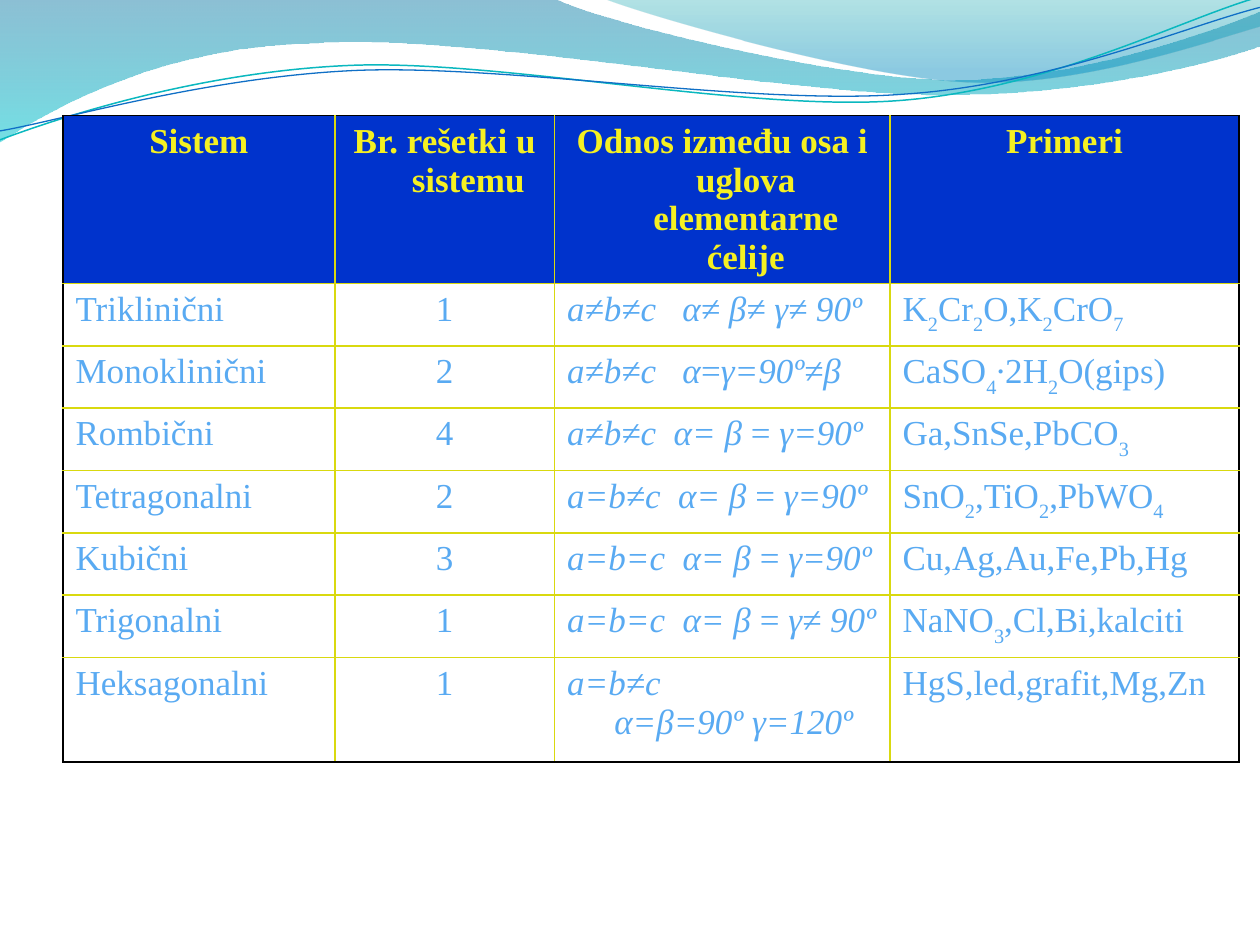
import pptx
import pptx.dml.color
import pptx.enum.text
import pptx.oxml
import pptx.oxml.ns
import pptx.util
from lxml import etree

Cm = pptx.util.Cm
Pt = pptx.util.Pt
RGBColor = pptx.dml.color.RGBColor
Align = pptx.enum.text.PP_ALIGN
qn = pptx.oxml.ns.qn

BLACK = RGBColor(0x00, 0x00, 0x00)
RULE_YELLOW = RGBColor(0xD9, 0xD9, 0x0F)
HEADER_BLUE = RGBColor(0x00, 0x33, 0xCC)
HEADER_YELLOW = RGBColor(0xF5, 0xF0, 0x22)
BODY_BLUE = RGBColor(0x59, 0xAA, 0xF2)
DEEP_BLUE = RGBColor(0x00, 0x74, 0xA1)
CYAN = RGBColor(0x00, 0xC6, 0xCF)
TEAL = RGBColor(0x00, 0xA1, 0xA9)
SKY_BLUE = RGBColor(0x00, 0x8B, 0xBF)
LINE_TEAL = RGBColor(0x0A, 0xB8, 0xBF)
LINE_BLUE = RGBColor(0x0F, 0x6F, 0xC6)

# Outlines in cm: one point is a straight step, three points are a Bézier step.
LEFT_WAVE = [
    [(0, 0)], [(11.18, -0.03)],
    [(12.09, 0.43), (16.87, 1.6), (19.25, 1.6)],
    [(21.67, 1.6), (24.33, 0.66), (25.4, 0.23)],
    [(25.43, 0.91)],
    [(24.97, 1.12), (22.1, 1.93), (18.95, 1.91)],
    [(15.8, 1.91), (9.7, 0.71), (6.53, 0.86)],
    [(3.28, 0.91), (1.17, 2.11), (-0.03, 2.87)],
]
RIGHT_WAVE = [
    [(12.17, -0.03)],
    [(12.93, 0.28), (17.32, 1.57), (19.53, 1.65)],
    [(21.74, 1.75), (24.41, 0.81), (25.4, 0.53)],
    [(25.4, 0)],
]
TEAL_CURVE = [
    [(0, 2.82)],
    [(1.22, 2.36), (4.01, 1.45), (7.04, 1.32)],
    [(10.03, 1.19), (15.06, 2.26), (18.11, 2.03)],
    [(21.16, 1.8), (23.83, 0.38), (25.35, -0.05)],
]
BLUE_CURVE = [
    [(0, 2.64)],
    [(1.19, 2.44), (4.17, 1.55), (7.19, 1.42)],
    [(10.24, 1.3), (15.16, 2.13), (18.21, 1.9)],
    [(21.23, 1.7), (23.9, 0.53), (25.4, 0.15)],
]

# "_" marks the next letter: upright in the formula column, subscript elsewhere.
CRYSTAL_SYSTEMS = [
    ["Sistem", "Br. rešetki u sistemu",
     "Odnos između osa i uglova elementarne ćelije", "Primeri"],
    ["Triklinični", "1", "a≠b≠c   α≠ β≠ γ≠ 90º", "K_2Cr_2O,K_2CrO_7"],
    ["Monoklinični", "2", "a≠b≠c   α_=γ=90º≠β", "CaSO_4∙2H_2O(gips)"],
    ["Rombični", "4", "a≠b≠c  α= β _= γ=90º", "Ga,SnSe,PbCO_3"],
    ["Tetragonalni", "2", "a=b≠c  α= β _= γ=90º", "SnO_2,TiO_2,PbWO_4"],
    ["Kubični", "3", "a=b=c  α= β _= γ=90º", "Cu,Ag,Au,Fe,Pb,Hg"],
    ["Trigonalni", "1", "a=b=c  α= β _= γ≠ 90º", "NaNO_3,Cl,Bi,kalciti"],
    ["Heksagonalni", "1", "a=b≠c\vα=β=90º γ=120º", "HgS,led,grafit,Mg,Zn"],
]
COLUMN_WIDTHS = [5.48, 4.43, 6.76, 7.04]
ROW_HEIGHTS = [3.18] + [1.26, 1.25, 1.26] * 2 + [2.1]
COUNT_COLUMN, FORMULA_COLUMN = 1, 2


def split_marked(text):
    """Yield (piece, is_marked) pairs."""
    first, *rest = text.split("_")
    yield first, False
    for part in rest:
        yield part[0], True
        if part[1:]:
            yield part[1:], False


def bend(shape, steps):
    """Join each three straight segments of a Bézier step into one curve."""
    nodes = iter(list(next(shape._element.iter(qn("a:path")))))
    for step in steps:
        segments = [next(nodes) for _ in step]
        if len(step) == 3:
            curve = etree.Element(qn("a:cubicBezTo"))
            segments[0].addprevious(curve)
            for segment in segments:
                curve.append(segment[0])
                segment.getparent().remove(segment)


class SlideBuilder:
    def __init__(self, page, font="Times New Roman", size=20):
        self.page = page
        self.font = font
        self.size = Pt(size)

    def outline(self, steps, close):
        start, *points = [(Cm(x), Cm(y)) for step in steps for x, y in step]
        builder = self.page.shapes.build_freeform(*start)
        builder.add_line_segments(points, close=close)
        shape = builder.convert_to_shape()
        bend(shape, steps)
        shape.shadow.inherit = False
        return shape

    def wave(self, steps, stops):
        """Draw a shape with a vertical gradient; stops are (position, colour, opacity %)."""
        shape = self.outline(steps, close=True)
        shape.line.fill.background()
        shape.fill.gradient()
        shape.fill.gradient_angle = 270
        for stop, (position, color, _) in zip(shape.fill.gradient_stops, stops):
            stop.position = position
            stop.color.rgb = color
        for node, (_, _, opacity) in zip(shape._element.spPr.iter(qn("a:srgbClr")), stops):
            etree.SubElement(node, qn("a:alpha"), val=str(opacity * 1000))

    def curve(self, steps, color, width):
        shape = self.outline(steps, close=False)
        shape.fill.background()
        shape.line.color.rgb = color
        shape.line.width = Pt(width)

    def borders(self, cell, colors):
        """Set 1 pt borders; colors are for left, right, top and bottom."""
        properties = cell._tc.get_or_add_tcPr()
        for i, (side, color) in enumerate(zip("LRTB", colors)):
            line = etree.Element(qn(f"a:ln{side}"), w=str(Pt(1)))
            fill = etree.SubElement(line, qn("a:solidFill"))
            etree.SubElement(fill, qn("a:srgbClr"), val=str(color))
            properties.insert(i, line)

    def cell_text(self, cell, text, align, color, bold, italic):
        para = cell.text_frame.paragraphs[0]
        para.alignment = align
        indent = Cm(0.95)
        properties = para._p.get_or_add_pPr()
        properties.set("marL", str(indent))
        properties.set("indent", str(-indent))
        for piece, marked in split_marked(text):
            for i, line in enumerate(piece.split("\v")):
                if i:
                    para.add_line_break()
                span = para.add_run()
                span.text = line
                span.font.italic = italic and not marked
                if marked and not italic:
                    span.font._element.set("baseline", "-30000")
        for part in (para, *para.runs):
            part.font.name = self.font
            part.font.size = self.size
            part.font.bold = bold
            part.font.color.rgb = color

    def table(self, rows, left, top, widths, heights):
        last_row, last_column = len(rows) - 1, len(widths) - 1
        table = self.page.shapes.add_table(
            len(rows), len(widths), Cm(left), Cm(top), Cm(sum(widths)), Cm(sum(heights))).table
        table.first_row = table.horz_banding = False
        for column, width in zip(table.columns, widths):
            column.width = Cm(width)
        for r, texts in enumerate(rows):
            table.rows[r].height = Cm(heights[r])
            header = r == 0
            for c, text in enumerate(texts):
                cell = table.cell(r, c)
                if header:
                    cell.fill.solid()
                    cell.fill.fore_color.rgb = HEADER_BLUE
                else:
                    cell.fill.background()
                edges = (c == 0, c == last_column, header, r == last_row)
                self.borders(cell, [BLACK if edge else RULE_YELLOW for edge in edges])
                if header or c == COUNT_COLUMN:
                    align = Align.CENTER
                else:
                    align = Align.LEFT if "\v" in text else Align.JUSTIFY
                self.cell_text(cell, text, align, HEADER_YELLOW if header else BODY_BLUE,
                               bold=header, italic=not header and c == FORMULA_COLUMN)


def main():
    deck = pptx.Presentation()
    deck.slide_width, deck.slide_height = Cm(25.4), Cm(19.05)
    builder = SlideBuilder(deck.slides.add_slide(deck.slide_layouts[6]))
    builder.wave(LEFT_WAVE, [(0, DEEP_BLUE, 45), (1, CYAN, 55)])
    builder.wave(RIGHT_WAVE, [(0, TEAL, 30), (0.8, SKY_BLUE, 45)])
    builder.curve(TEAL_CURVE, LINE_TEAL, 0.85)
    builder.curve(BLUE_CURVE, LINE_BLUE, 0.75)
    builder.table(CRYSTAL_SYSTEMS, 1.27, 2.33, COLUMN_WIDTHS, ROW_HEIGHTS)
    deck.save("out.pptx")


if __name__ == "__main__":
    main()
